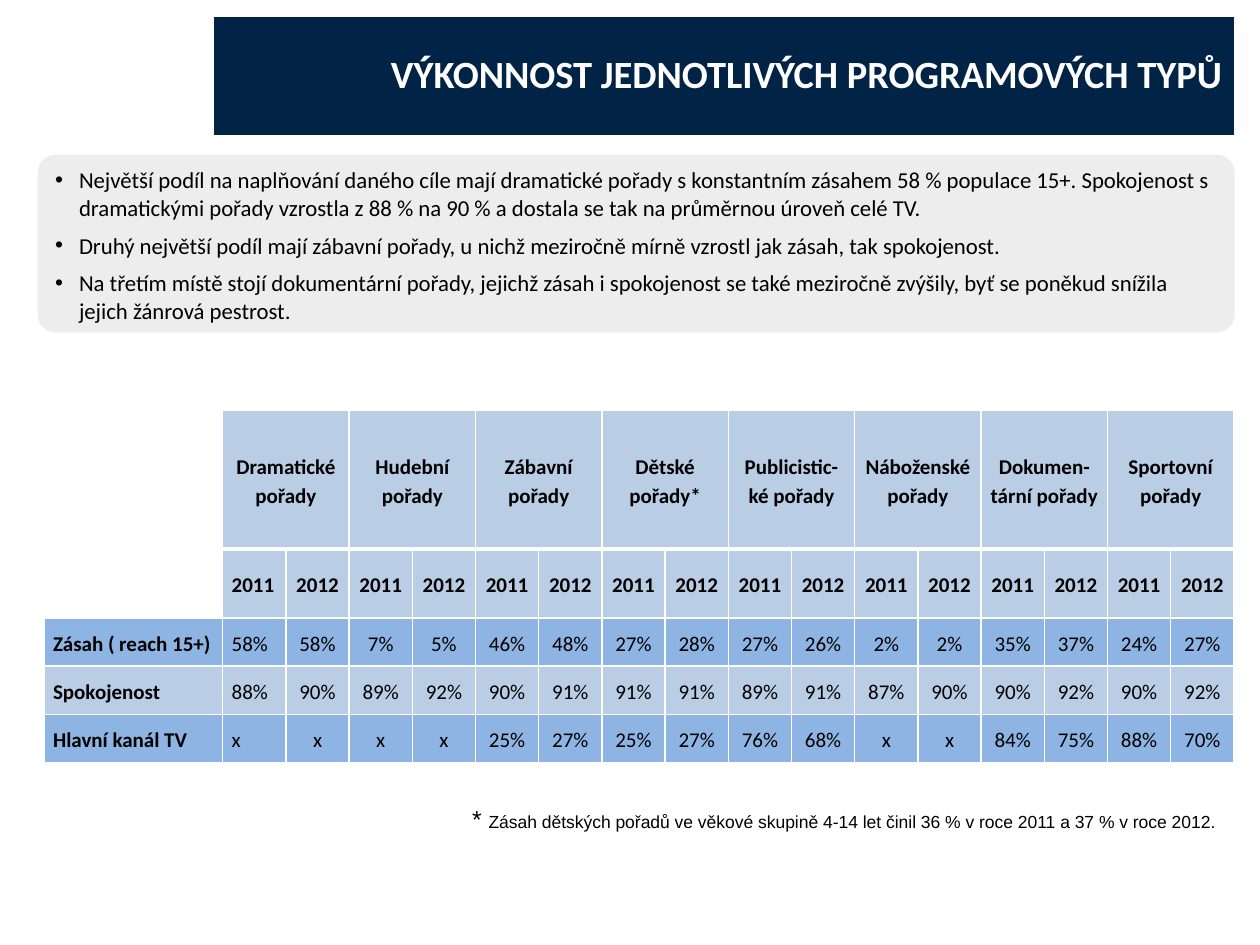
import pptx
import pptx.dml.color
import pptx.enum.shapes
import pptx.enum.text
import pptx.oxml
import pptx.oxml.ns
import pptx.util

Cm, Pt = pptx.util.Cm, pptx.util.Pt
RGB = pptx.dml.color.RGBColor.from_string
ALIGN = pptx.enum.text.PP_ALIGN
ANCHOR = pptx.enum.text.MSO_ANCHOR

TITLE = "VÝKONNOST JEDNOTLIVÝCH PROGRAMOVÝCH TYPŮ"
FINDINGS = [
    "Největší podíl na naplňování daného cíle mají dramatické pořady s konstantním zásahem 58 % populace 15+. "
    "Spokojenost s dramatickými pořady vzrostla z 88 % na 90 % a dostala se tak na průměrnou úroveň celé TV.",
    "Druhý největší podíl mají zábavní pořady, u nichž meziročně mírně vzrostl jak zásah, tak spokojenost.",
    "Na třetím místě stojí dokumentární pořady, jejichž zásah i spokojenost se také meziročně zvýšily, "
    "byť se poněkud snížila jejich žánrová pestrost.",
]
GENRES = ["Dramatické pořady", "Hudební pořady", "Zábavní pořady", "Dětské pořady*",
          "Publicistic-ké pořady", "Náboženské pořady", "Dokumen-tární pořady", "Sportovní pořady"]
YEARS = ["2011", "2012"]
METRICS = [
    ("Zásah ( reach 15+)", "58% 58% 7% 5% 46% 48% 27% 28% 27% 26% 2% 2% 35% 37% 24% 27%"),
    ("Spokojenost", "88% 90% 89% 92% 90% 91% 91% 91% 89% 91% 87% 90% 90% 92% 90% 92%"),
    ("Hlavní kanál TV", "x x x x 25% 27% 25% 27% 76% 68% x x 84% 75% 88% 70%"),
]
FOOTNOTE = [("* ", "mark"), ("Zásah dětských pořadů ve věkové skupině 4-14 let činil 36 % "
                             "v roce 2011 a 37 % v roce 2012.", "note")]

THEME = {
    "white": "FFFFFF", "navy": "002346", "grey": "D9D9D9", "light": "B9CDE5", "mid": "8EB4E3",
    "title": {"name": "Calibri", "size": Pt(22), "bold": True, "color": "FFFFFF"},
    "body": {"name": "Calibri", "size": Pt(13), "bold": False, "color": "000000"},
    "head": {"name": "Calibri", "size": Pt(12), "bold": True, "color": "000000"},
    "value": {"name": "Calibri", "size": Pt(12), "bold": False, "color": "000000"},
    "mark": {"name": "Arial", "size": Pt(14), "color": "000000"},
    "note": {"name": "Arial", "size": Pt(10), "color": "000000"},
}
CELL = {"vertical_anchor": ANCHOR.MIDDLE, "margin_left": Cm(0.18), "margin_right": Cm(0.18),
        "margin_top": 0, "margin_bottom": 0}
CELL_PARAGRAPH = {"line_spacing": 1.15, "space_after": Pt(10)}


def apply(obj, values):
    for name, value in values.items():
        setattr(obj, name, value)


def add_run(p, text, style):
    r = p.add_run()
    r.text = text
    apply(r.font, {k: v for k, v in THEME[style].items() if k != "color"})
    r.font.color.rgb = RGB(THEME[style]["color"])


def paint(target, color):
    target.fill.solid()
    target.fill.fore_color.rgb = RGB(THEME[color])


def add_xml(parent, xml):
    ns = pptx.oxml.ns.nsdecls("a")
    parent.append(pptx.oxml.parse_xml(xml.replace(" ", f" {ns} ", 1)))


def add_table(s, rows, cols, box):
    table = s.shapes.add_table(rows, cols, *map(Cm, box)).table
    apply(table, {"first_row": False, "horz_banding": False})
    return table


def add_title(s):
    cell = add_table(s, 1, 1, (4.29, 0.32, 20.6, 2.41)).cell(0, 0)
    cell.vertical_anchor = ANCHOR.MIDDLE
    paint(cell, "navy")
    p = cell.text_frame.paragraphs[0]
    p.alignment = ALIGN.RIGHT
    add_run(p, TITLE, "title")


def add_findings(s):
    sp = s.shapes.add_shape(pptx.enum.shapes.MSO_SHAPE.ROUNDED_RECTANGLE,
                            *map(Cm, (0.76, 3.12, 24.13, 3.58)))
    sp.adjustments[0] = 0.1
    sp.shadow.inherit = False
    sp.line.fill.background()
    paint(sp, "grey")
    color = sp.fill._xPr.find(".//" + pptx.oxml.ns.qn("a:srgbClr"))
    add_xml(color, '<a:alpha val="46000"/>')
    tf = sp.text_frame
    apply(tf, {"word_wrap": True, "vertical_anchor": ANCHOR.TOP})
    for i, text in enumerate(FINDINGS):
        p = tf.add_paragraph() if i else tf.paragraphs[0]
        apply(p, {"alignment": ALIGN.LEFT, "space_before": Pt(3), "space_after": Pt(3)})
        pPr = p._p.get_or_add_pPr()
        pPr.set("marL", str(Cm(0.48)))
        pPr.set("indent", str(-Cm(0.48)))
        add_xml(pPr, '<a:buFont typeface="Arial"/>')
        add_xml(pPr, '<a:buChar char="•"/>')
        add_run(p, text, "body")


def border(cell, row):
    widths = {"L": 1, "R": 1, "T": 1, "B": 3 if row == 0 else 1}
    if row == 1:
        del widths["T"]
    for side, width in widths.items():
        add_xml(cell._tc.get_or_add_tcPr(),
                f'<a:ln{side} w="{Pt(width)}"><a:solidFill><a:srgbClr val="{THEME["white"]}"/>'
                f'</a:solidFill></a:ln{side}>')


def add_performance(s):
    genre_row = [""] + [text for g in GENRES for text in (g, "")]
    grid = [genre_row, [""] + YEARS * len(GENRES)]
    grid += [[label] + values.split() for label, values in METRICS]
    heights = [2.79, 1.39] + [0.97] * len(METRICS)
    width, label_width, cols = 24.0, 3.6, len(genre_row)
    table = add_table(s, len(grid), cols, (0.89, 8.28, width, sum(heights)))
    for row, height in zip(table.rows, heights):
        row.height = Cm(height)
    for c, column in enumerate(table.columns):
        column.width = Cm((width - label_width) / (cols - 1) if c else label_width)
    for r, texts in enumerate(grid):
        for c, text in enumerate(texts):
            cell = table.cell(r, c)
            apply(cell, CELL)
            border(cell, r)
            paint(cell, "white" if r < 2 and c == 0 else "mid" if r in (2, 4) else "light")
            if text:
                p = cell.text_frame.paragraphs[0]
                apply(p, CELL_PARAGRAPH)
                p.alignment = ALIGN.LEFT if r and c < 2 else ALIGN.CENTER
                add_run(p, text, "head" if r < 2 or c == 0 else "value")
    for c in range(1, cols, len(YEARS)):
        table.cell(0, c).merge(table.cell(0, c + len(YEARS) - 1))


def add_footnote(s):
    tf = s.shapes.add_textbox(*map(Cm, (9.27, 16.08, 15.62, 0.86))).text_frame
    apply(tf, {"word_wrap": False, "vertical_anchor": ANCHOR.MIDDLE,
               "auto_size": pptx.enum.text.MSO_AUTO_SIZE.SHAPE_TO_FIT_TEXT})
    for text, style in FOOTNOTE:
        add_run(tf.paragraphs[0], text, style)


def main():
    prs = pptx.Presentation()
    apply(prs, {"slide_width": Cm(25.4), "slide_height": Cm(19.05)})
    s = prs.slides.add_slide(prs.slide_layouts[6])
    for add in (add_title, add_findings, add_performance, add_footnote):
        add(s)
    prs.save("out.pptx")


if __name__ == "__main__":
    main()
